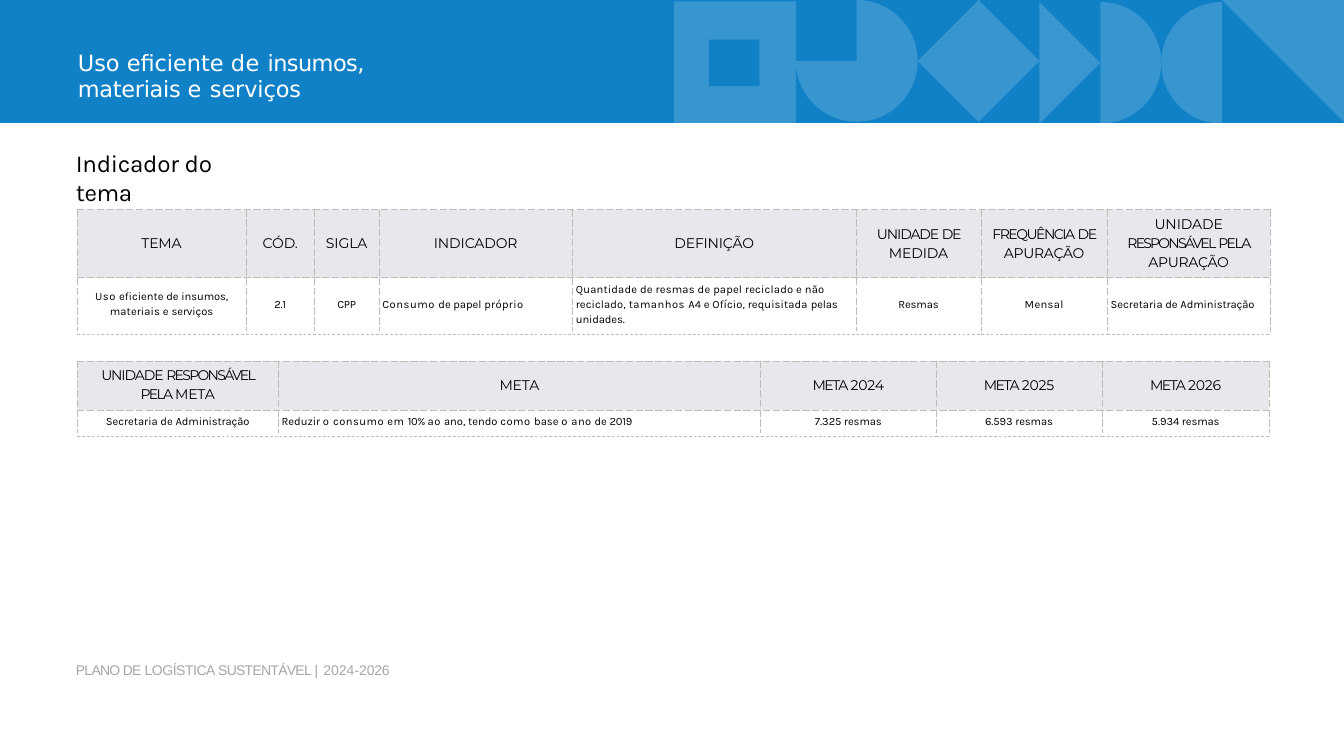
from dataclasses import dataclass
from itertools import accumulate
from math import cos, radians, sin

from lxml.etree import SubElement
from pptx import Presentation
from pptx.dml.color import RGBColor
from pptx.enum.dml import MSO_LINE
from pptx.enum.shapes import MSO_CONNECTOR, MSO_SHAPE
from pptx.enum.text import MSO_ANCHOR, PP_ALIGN
from pptx.oxml import parse_xml
from pptx.oxml.ns import nsdecls, qn
from pptx.util import Inches, Pt


@dataclass(frozen=True)
class Style:
    font: str
    size: float
    color: str = "000000"


class Theme:
    blue, white, head, rule = "1181C7", "FFFFFF", "E7E8EC", "C2B9B9"
    rule_width = 0.75
    banner = Style("DejaVu Sans", 24, "FFFFFF")
    title = Style("Karla", 26)
    th = Style("Montserrat", 15)
    td = Style("Karla", 12)
    footer = Style("Arial", 15, "A6A6A6")


# Text is a list of (words, letter spacing in points).
BANNER = [("Uso eficiente ", 0), ("de ", 0.6), ("insumos, ", -0.6),
          ("materiais ", -0.3), ("e ", 0.8), ("serviços", -0.1)]
TITLE = [("Indicador ", -0.3), ("do ", 0), ("tema", -0.5)]
FOOTER = [("PLANO DE ", -0.8), ("LOGÍSTICA ", -0.5), ("SUSTENTÁVEL ", -0.8),
          ("| ", 0.7), ("2024-", 0), ("2026", -0.2)]
SECRETARIA = [("Secretaria de ", 0), ("Administração", -0.1)]

# rule_ends: columns at which the dashed rules under the table start and end
INDICATOR = dict(
    top=3.12, rows=[1.01, 0.8], left_cols={3, 4, 7}, rule_ends=[0, 4, 6, 7, 8],
    cols=[2.51, 1.02, 0.96, 2.88, 4.22, 1.86, 1.88, 2.42], rule_y=4.97, head_pad=0.1,
    head=[
        [("TEMA", -0.2)], [("CÓD.", -0.2)], [("SIGLA", -0.1)],
        [("INDICADOR", -0.1)], [("DEFINIÇÃO", -0.2)],
        [("UNIDADE ", -1.2), ("DE ", -1.4), ("MEDIDA", -0.1)],
        [("FREQUÊNCIA ", -1.6), ("DE ", -1.3), ("APURAÇÃO", -0.3)],
        [("UNIDADE ", -0.1), ("RESPONSÁVEL ", -1.9), ("PELA ", -1.6), ("APURAÇÃO", -0.3)],
    ],
    body=[
        [("Uso ", 0.6), ("eficiente de ", 0), ("insumos, ", -0.1),
         ("materiais e ", 0.1), ("serviços", -0.1)],
        [("2.1", -0.2)], [("CPP", -0.2)],
        [("Consumo ", 0.6), ("de papel ", 0), ("próprio", 0.4)],
        [("Quantidade de resmas de papel reciclado e não ", 0.2), ("reciclado, ", 0.1),
         ("tamanhos ", 0.5), ("A4 e Ofício, requisitada ", 0.1), ("pelas unidades.", -0.1)],
        [("Resmas", -0.1)], [("Mensal", 0.4)], SECRETARIA,
    ])

YEARS = {"2024": "7.325", "2025": "6.593", "2026": "5.934"}
GOALS = dict(
    top=5.37, rows=[0.73, 0.35], left_cols={1}, rule_ends=[0, 3, 4, 5],
    cols=[2.99, 7.18, 2.61, 2.47, 2.49], rule_y=6.5, head_pad=0.2,
    head=[[("UNIDADE ", -1.2), ("RESPONSÁVEL PELA ", -1.8), ("META", -0.2)],
          [("META", -0.2)],
          *([("META ", -1.6), (year, -0.2)] for year in YEARS)],
    body=[SECRETARIA,
          [("Reduzir ", 0), ("o ", 0.7), ("consumo ", 0.5), ("em ", 0.6), ("10% ", -0.5),
           ("ao ", 0.5), ("ano, tendo ", 0), ("como ", 0.6), ("base ", 0), ("o ", 0.7),
           ("ano", 0.5), (" de ", 0), ("2019", -0.2)],
          *([(goal, 0), (" resmas", -0.1)] for goal in YEARS.values())])

WIDTH, HEIGHT = 20, 11.25
LEFT = 1.15
DOT = 0.01
BANNER_H = 1.83
PATTERN_X = 10.03
UNIT = (WIDTH - PATTERN_X) / 11  # the banner pattern is 11 units wide, 2 high


def rgb(value):
    return RGBColor.from_string(value)


def paint(shape, color, alpha=None):
    shape.shadow.inherit = False
    shape.line.fill.background()
    shape.fill.solid()
    shape.fill.fore_color.rgb = rgb(color)
    if alpha:
        clr = shape.fill._xPr.find(qn("a:solidFill"))[0]
        SubElement(clr, qn("a:alpha"), val=str(alpha * 1000))


def write(p, words, style):
    for text, spacing in words:
        r = p.add_run()
        r.text = text
        r.font.name, r.font.size = style.font, Pt(style.size)
        r.font.color.rgb = rgb(style.color)
        r._r.get_or_add_rPr().set("spc", str(round(spacing * 100)))


def add_preset(s, kind, x, y, w, h, color, alpha=None):
    paint(s.shapes.add_shape(kind, *map(Inches, (x, y, w, h))), color, alpha)


def add_outline(s, contours, color, alpha=None):
    """One shape from closed contours, each a list of points in inches."""
    contours = [[(Inches(x), Inches(y)) for x, y in c] for c in contours]
    builder = s.shapes.build_freeform(*contours[0][0])
    for i, points in enumerate(contours):
        if i:
            builder.move_to(*points[0])
        builder.add_line_segments(points[1:], close=True)
    paint(builder.convert_to_shape(), color, alpha)


def arc(cx, start, end):
    """Points on the unit circle around (cx, 1), angles clockwise in degrees."""
    return [(cx + cos(radians(a)), 1 + sin(radians(a))) for a in range(start, end + 1, 3)]


def add_banner(s):
    add_preset(s, MSO_SHAPE.RECTANGLE, 0, 0, WIDTH, BANNER_H, Theme.blue)
    tile = 2 * UNIT
    add_preset(s, MSO_SHAPE.RECTANGLE, PATTERN_X, 0.02, tile, tile, Theme.white, 16)
    add_preset(s, MSO_SHAPE.RECTANGLE, 10.55, 0.59, 0.75, 0.69, Theme.blue)
    add_preset(s, MSO_SHAPE.DIAMOND, PATTERN_X + 2 * tile, 0, tile, tile, Theme.white, 16)
    for points, dy, alpha in [
        (arc(3, -90, 180) + [(3, 1)], 0, 16),
        ([(6, 0), (7, 1), (6, 2)], 0.03, 18),
        (arc(7, -90, 90), 0.03, 16),
        (arc(9, 90, 270), 0.03, 16),
        ([(9, 0), (11, 0), (11, 2)], 0, 16),
    ]:
        contour = [(PATTERN_X + x * UNIT, dy + y * UNIT) for x, y in points]
        add_outline(s, [contour], Theme.white, alpha)


def add_text(s, x, y, w, h, words, style, inset=0.01, leading=None):
    tf = s.shapes.add_textbox(*map(Inches, (x, y, w, h))).text_frame
    tf.word_wrap = True
    tf.margin_left, tf.margin_top = Inches(0.02), Inches(inset)
    tf.margin_right = tf.margin_bottom = 0
    p = tf.paragraphs[0]
    if leading:
        p.line_spacing = Pt(leading)
    write(p, words, style)


def add_borders(cell, sides):
    tcPr = cell._tc.get_or_add_tcPr()
    for i, side in enumerate(sides):
        tcPr.insert(i, parse_xml(
            f'<a:ln{side} {nsdecls("a")} w="{Pt(Theme.rule_width)}"><a:solidFill>'
            f'<a:srgbClr val="{Theme.rule}"/></a:solidFill>'
            f'<a:prstDash val="dash"/></a:ln{side}>'))


def add_bottom_rules(s, edges, rule_ends, y):
    """Dashed rules under a table, with a dot at each column edge."""
    dots = [[(x, y - DOT), (x, y), (x + DOT, y), (x + DOT, y - DOT)] for x in edges]
    add_outline(s, dots, Theme.rule)
    for a, b in zip(rule_ends, rule_ends[1:]):
        line = s.shapes.add_connector(
            MSO_CONNECTOR.STRAIGHT, *map(Inches, (edges[a], y, edges[b], y)))
        line.line.color.rgb = rgb(Theme.rule)
        line.line.width = Pt(Theme.rule_width)
        line.line.dash_style = MSO_LINE.DASH
        SubElement(line._element.spPr, qn("a:effectLst"))


def add_grid(s, top, rows, cols, left_cols, head, body, head_pad, rule_ends, rule_y):
    frame = s.shapes.add_table(len(rows), len(cols), Inches(LEFT), Inches(top),
                               Inches(sum(cols)), Inches(sum(rows)))
    table = frame.table
    table.first_row = table.horz_banding = False
    for column, width in zip(table.columns, cols):
        column.width = Inches(width)
    for i, (height, texts) in enumerate(zip(rows, (head, body))):
        table.rows[i].height = Inches(height)
        for j, words in enumerate(texts):
            cell = table.cell(i, j)
            left = i == 1 and j in left_cols
            pad = 0.1 if i else head_pad
            cell.vertical_anchor = MSO_ANCHOR.MIDDLE
            cell.margin_left = Inches(0.05 if left else pad)
            cell.margin_right = Inches(0.05 * cols[j] if left else pad)
            cell.margin_top, cell.margin_bottom = 0, Inches(0.03)
            if i == 0:
                cell.fill.solid()
                cell.fill.fore_color.rgb = rgb(Theme.head)
            else:
                cell.fill.background()
            add_borders(cell, "LRT" if i else "LRTB")
            p = cell.text_frame.paragraphs[0]
            p.alignment = PP_ALIGN.LEFT if left else PP_ALIGN.CENTER
            p.line_spacing = 1.15 if i else 1.12
            write(p, words, Theme.td if i else Theme.th)
    edges = list(accumulate(cols, initial=LEFT))
    add_bottom_rules(s, edges, rule_ends, rule_y)


def main():
    prs = Presentation()
    prs.slide_width, prs.slide_height = Inches(WIDTH), Inches(HEIGHT)
    s = prs.slides.add_slide(prs.slide_layouts[6])
    add_banner(s)
    add_grid(s, **INDICATOR)
    add_grid(s, **GOALS)
    add_text(s, 1.11, 2.2, 2.87, 0.46, TITLE, Theme.title)
    add_text(s, 1.14, 0.7, 5.86, 0.82, BANNER, Theme.banner, inset=0.03, leading=28.5)
    add_text(s, 1.11, 9.84, 4.77, 0.28, FOOTER, Theme.footer)
    prs.save("out.pptx")


if __name__ == "__main__":
    main()
